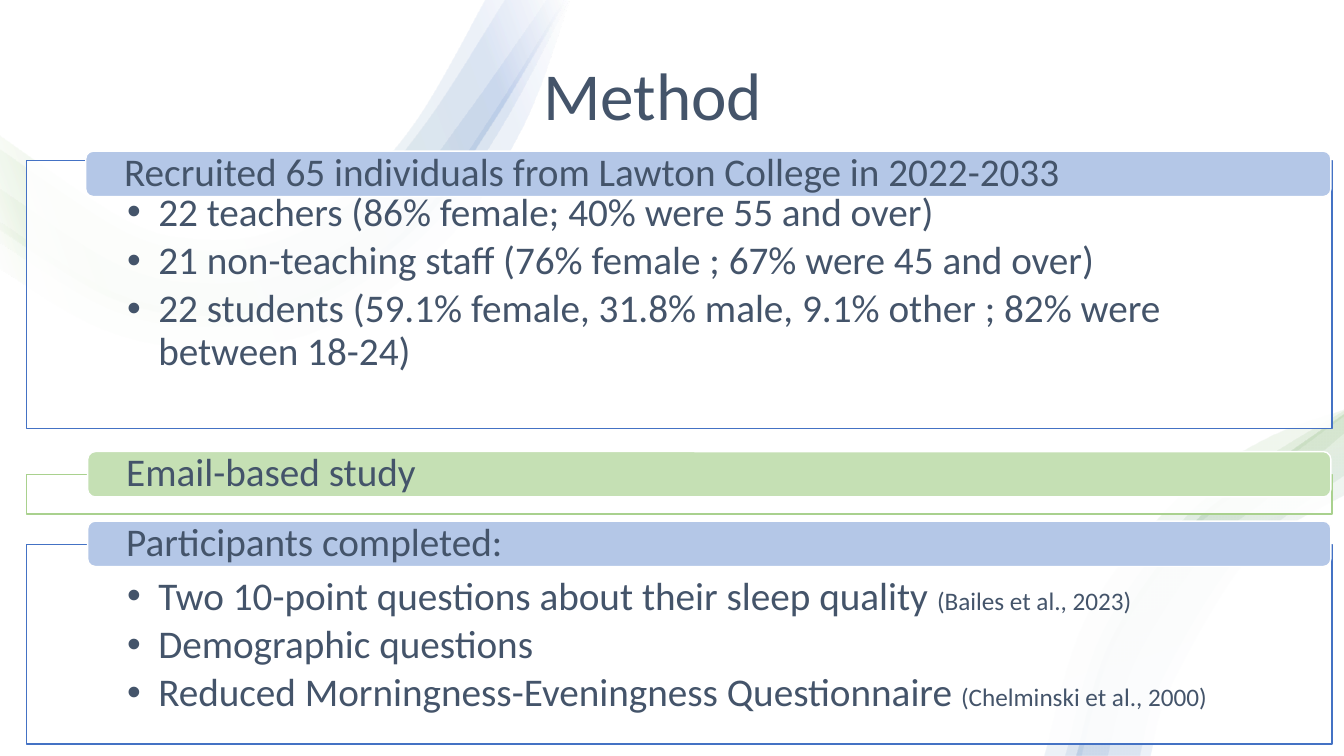
from lxml import etree
from pptx import Presentation
from pptx.dml.color import RGBColor
from pptx.enum.shapes import MSO_SHAPE
from pptx.enum.text import MSO_ANCHOR, PP_ALIGN
from pptx.oxml.ns import qn
from pptx.util import Inches, Pt

WHITE = RGBColor(0xFF, 0xFF, 0xFF)
SLATE = RGBColor(0x44, 0x54, 0x6A)
BLUE = RGBColor(0x44, 0x72, 0xC4)
LIGHT_BLUE = RGBColor(0xB4, 0xC7, 0xE7)
GREEN = RGBColor(0x70, 0xAD, 0x47)
MID_GREEN = RGBColor(0xA9, 0xD1, 0x8E)
LIGHT_GREEN = RGBColor(0xC5, 0xE0, 0xB4)
FONT = "Calibri"
WAVE_STOPS = [(2, WHITE), (16, GREEN), (85, BLUE), (100, WHITE)]
CURVE_STEPS = 8

# Each wave: its two outer edges and the gradient angle
WAVES = [
    ([(0, 2.67), (1, 3.26), (2, 3.45), (3.2, 3.26), (4.4, 2.41), (5.18, 1.27), (5.65, 0)],
     [(0, 1.34), (1.25, 2.18), (2, 2.37), (2.7, 2.29), (3.5, 1.87), (4.13, 1.19), (4.81, 0)],
     20),
    ([(10.36, 7.5), (10.78, 6.11), (11.65, 4.97), (12.51, 4.37), (13.33, 4.06)],
     [(11.41, 7.5), (11.58, 6.87), (12.19, 5.78), (12.65, 5.3), (13.33, 4.91)],
     290),
]
# Each ribbon covers this share of the way from the first edge to the second.
RIBBONS = [(0, 0.35), (0.2, 0.6), (0.3, 0.9), (0.3, 1)]
END_TAPER = 2.5

# Bar colour, line colour, box top and height, bar left and top, heading, bullets
SECTIONS = [
    (LIGHT_BLUE, BLUE, 1.59, 2.66, 0.85, 1.5,
     "Recruited 65 individuals from Lawton College in 2022-2033",
     [["22 teachers (86% female; 40% were 55 and over)"],
      ["21 non-teaching staff (76% female ; 67% were 45 and over)"],
      ["22 students (59.1% female, 31.8% male, 9.1% other ; 82% were between 18-24)"]]),
    (LIGHT_GREEN, MID_GREEN, 4.71, 0.39, 0.87, 4.48, "Email-based study", []),
    (LIGHT_BLUE, BLUE, 5.4, 1.98, 0.87, 5.17, "Participants completed:",
     [["Two 10-point questions about their sleep quality ", "(Bailes et al., 2023)"],
      ["Demographic questions"],
      ["Reduced Morningness-Eveningness Questionnaire ", "(Chelminski et al., 2000)"]]),
]


def ribbon_edge(first, second, share):
    """Blend two edges and return a smooth curve through the result, in EMU."""
    knots = []
    for number, (start, end) in enumerate(zip(first, second)):
        part = share ** END_TAPER if number == len(first) - 1 else share
        knots.append([a + (b - a) * part for a, b in zip(start, end)])
    padded = [knots[0]] + knots + [knots[-1]]
    points = []
    for neighbours in zip(padded, padded[1:], padded[2:], padded[3:]):
        for step in range(CURVE_STEPS):
            t = step / CURVE_STEPS
            points.append([
                Inches(b + t * (c - a) / 2
                       + t**2 * (a - 2.5 * b + 2 * c - d / 2)
                       + t**3 * (3 * b - a - 3 * c + d) / 2)
                for a, b, c, d in zip(*neighbours)
            ])
    return points + [[Inches(value) for value in knots[-1]]]


def write_text(shape, paragraphs, size=28, align=PP_ALIGN.LEFT,
               anchor=MSO_ANCHOR.MIDDLE, insets=(0.36, 0, 0.36, 0), bullets=False):
    """Fill a shape with paragraphs; a second run is a small citation."""
    frame = shape.text_frame
    frame.word_wrap = True
    frame.vertical_anchor = anchor
    (frame.margin_left, frame.margin_top,
     frame.margin_right, frame.margin_bottom) = map(Inches, insets)
    for number, texts in enumerate(paragraphs):
        paragraph = frame.add_paragraph() if number else frame.paragraphs[0]
        paragraph.alignment = align
        paragraph.line_spacing = 0.9
        for text, points in zip(texts, (size, 18)):
            run = paragraph.add_run()
            run.text = text
            run.font.size = Pt(points)
            run.font.name = FONT
            run.font.color.rgb = SLATE
        if bullets:
            paragraph.level = 1
            paragraph.space_after = Pt(4.2)
            properties = paragraph._p.get_or_add_pPr()
            properties.set("marL", str(Inches(0.31)))
            properties.set("indent", str(-Inches(0.31)))
            etree.SubElement(properties, qn("a:buFont"), typeface="Arial")
            etree.SubElement(properties, qn("a:buChar"), char="•")


presentation = Presentation()
presentation.slide_width = Inches(13.33)
presentation.slide_height = Inches(7.5)
slide = presentation.slides.add_slide(presentation.slide_layouts[6])
shapes = slide.shapes

# Background waves
for first, second, angle in WAVES:
    for near, far in RIBBONS:
        outline = ribbon_edge(first, second, near) + ribbon_edge(first, second, far)[::-1]
        builder = shapes.build_freeform(*outline[0])
        builder.add_line_segments(outline[1:], close=True)
        ribbon = builder.convert_to_shape()
        ribbon.shadow.inherit = False
        ribbon.line.fill.background()
        ribbon.fill.gradient()
        ribbon.fill.gradient_angle = angle
        stop_list = ribbon._element.spPr.find(".//" + qn("a:gsLst"))
        for stop in list(stop_list):
            stop_list.remove(stop)
        for position, color in WAVE_STOPS:
            stop = etree.SubElement(stop_list, qn("a:gs"), pos=str(position * 1000))
            stop_color = etree.SubElement(stop, qn("a:srgbClr"), val=str(color))
            etree.SubElement(stop_color, qn("a:alpha"), val="10000")

title = shapes.add_textbox(Inches(2.79), Inches(0.13), Inches(7.37), Inches(1.26))
write_text(title, [["Method"]], size=48, align=PP_ALIGN.CENTER,
           anchor=MSO_ANCHOR.BOTTOM, insets=(0.1, 0.05, 0.1, 0.05))

# Outlined boxes with their heading bars
for bar_color, line_color, top, height, bar_left, bar_top, heading, items in SECTIONS:
    box = shapes.add_shape(MSO_SHAPE.RECTANGLE, Inches(0.26), Inches(top),
                           Inches(12.95), Inches(height))
    bar = shapes.add_shape(MSO_SHAPE.ROUNDED_RECTANGLE, Inches(bar_left), Inches(bar_top),
                           Inches(13.2 - bar_left), Inches(0.45))
    for shape, fill, line in ((box, WHITE, line_color), (bar, bar_color, WHITE)):
        shape.shadow.inherit = False
        shape.fill.solid()
        shape.fill.fore_color.rgb = fill
        shape.line.color.rgb = line
        shape.line.width = Pt(1)
    box_color = box._element.spPr.find(qn("a:solidFill")).find(qn("a:srgbClr"))
    etree.SubElement(box_color, qn("a:alpha"), val="90000")
    write_text(box, items, anchor=MSO_ANCHOR.TOP, insets=(1, 0.32, 1, 0.22), bullets=True)
    write_text(bar, [[heading]])

presentation.save("out.pptx")
